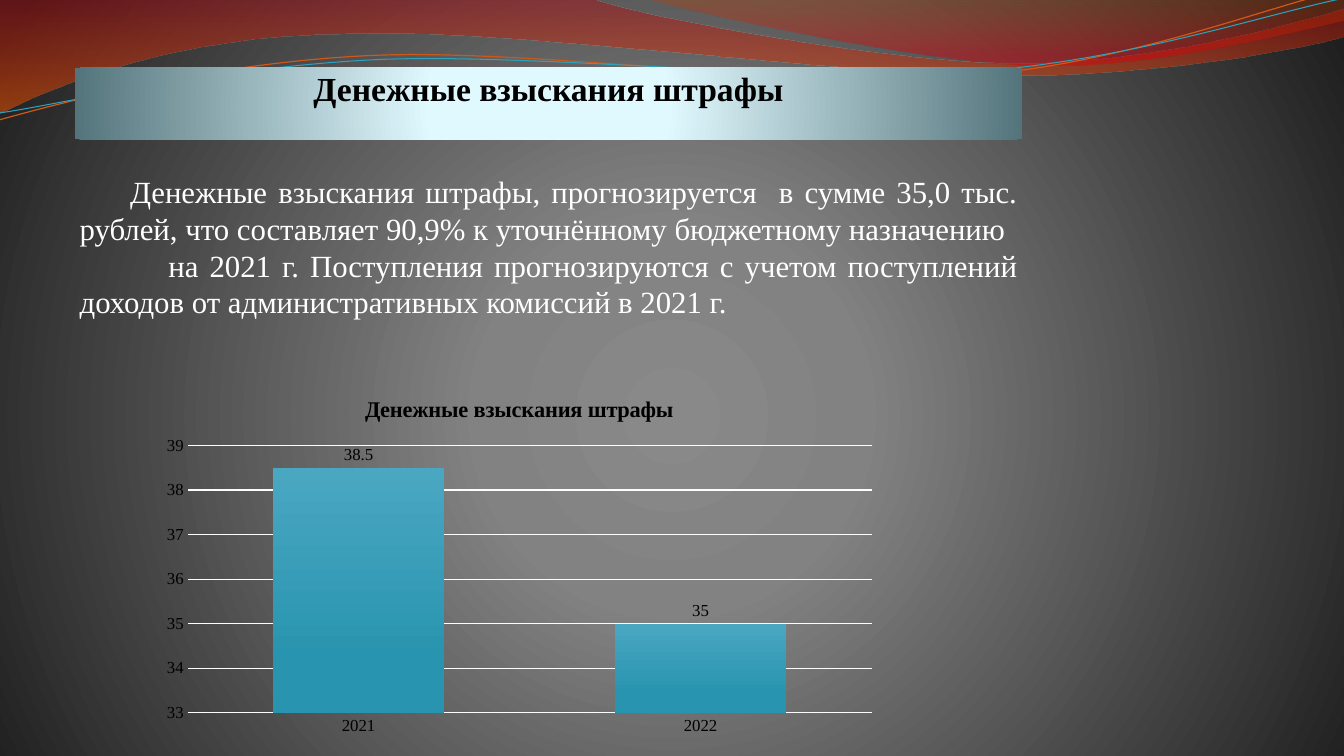
"""Builds a slide on fines revenue with a title bar, a paragraph and a column chart."""
from lxml import etree
from pptx import Presentation
from pptx.chart.data import CategoryChartData
from pptx.dml.color import RGBColor
from pptx.enum.chart import XL_CHART_TYPE, XL_LABEL_POSITION, XL_TICK_MARK
from pptx.enum.text import MSO_ANCHOR, MSO_AUTO_SIZE, PP_ALIGN
from pptx.oxml.ns import qn
from pptx.util import Inches, Pt

COLORS = {
    "black": "000000", "white": "FFFFFF", "grid": "FAFEFE",
    "orange": "CF5818", "teal": "2DA2BF",
    "crimson": "AF0911", "flame": "EE5300", "rust": "C24400", "scarlet": "DC000B",
    "smoke": "898989", "ash": "828282", "coal": "1F1F1F",
    "ice": "E1FAFF", "frost": "E0F9FF", "slate": "54747B",
    "column_top": "4AA7C2", "column_base": "2994AF",
}
FONT = "Times New Roman"
CELL = Inches(0.1)
COLUMNS, ROWS = 133.3, 75
HEADING = "Денежные взыскания штрафы"
BODY = [
    ("Денежные взыскания штрафы, прогнозируется  в сумме 35,0 тыс. рублей, "
     "что составляет 90,9% к уточнённому бюджетному назначению", 5, 4.4),
    ("на 2021 г. Поступления прогнозируются с учетом поступлений доходов "
     "от административных комиссий в 2021 г.", 8.8, 0),
]
RIBBONS = [
    ([(-0.1, -0.1), (58.7, -0.1), (63.4, 1.7, 88.5, 6.3, 101.1, 6.3),
      (113.8, 6.3, 127.8, 2.6, 133.3, 0.9), (133.5, 3.6),
      (131.1, 4.4, 116, 7.6, 99.4, 7.5), (82.9, 7.5, 50.9, 2.8, 34.3, 3.4),
      (17.2, 3.6, 6.1, 8.3, -0.1, 11.3)],
     [(0, "crimson", 45), (100, "flame", 55)]),
    ([(63.9, -0.1), (67.9, 1.1, 90.9, 6.2, 102.5, 6.5),
      (114.1, 6.9, 128.2, 3.2, 133.3, 2.1), (133.3, 0)],
     [(0, "rust", 30), (80, "scarlet", 45)]),
]
STRANDS = [
    ([(-0.1, 11.9), (6.4, 10.1, 21.1, 6.2, 36.9, 5.5),
      (52.7, 4.8, 79, 8.7, 95, 7.6), (111, 6.6, 125.2, 0.8, 133.1, -1)], "orange", 0.85),
    ([(0, 11.2), (6.3, 10.3, 21.8, 6.6, 37.8, 5.9),
      (53.7, 5.3, 79.6, 8.2, 95.5, 7.2), (111.5, 6.2, 125.5, 1.4, 133.4, -0.2)], "teal", 0.75),
]


def cells(count):
    return round(count * CELL)


class SlideBuilder:
    """Holds the style and the current slide."""

    def __init__(self, deck, font, colors):
        self.font, self.colors = font, colors
        self.page = deck.slides.add_slide(deck.slide_layouts[1])

    def color(self, name):
        return RGBColor.from_string(self.colors[name])

    def style(self, font, size, color, bold=False):
        font.name, font.size, font.bold = self.font, Pt(size), bold
        font.color.rgb = self.color(color)

    def gradient(self, fill, stops, radial=False):
        fill.solid()
        solid = fill._xPr.find(qn("a:solidFill"))
        grad = etree.Element(qn("a:gradFill"), rotWithShape="1")
        stop_list = etree.SubElement(grad, qn("a:gsLst"))
        for position, name, alpha in stops:
            stop = etree.SubElement(stop_list, qn("a:gs"), pos=str(position * 1000))
            tone = etree.SubElement(stop, qn("a:srgbClr"), val=self.colors[name])
            if alpha < 100:
                etree.SubElement(tone, qn("a:alpha"), val=str(alpha * 1000))
        if radial:
            shade = etree.SubElement(grad, qn("a:path"), {"path": "circle"})
            etree.SubElement(shade, qn("a:fillToRect"),
                             l="10000", t="110000", r="10000", b="100000")
        else:
            etree.SubElement(grad, qn("a:lin"), ang="5400000", scaled="0")
        solid.getparent().replace(solid, grad)

    def background(self, stops):
        self.gradient(self.page.background.fill, stops, radial=True)

    def outline(self, segments, closed):
        points = [(segment[i] * 100, segment[i + 1] * 100)
                  for segment in segments for i in range(0, len(segment), 2)]
        builder = self.page.shapes.build_freeform(*points[0], scale=CELL / 100)
        builder.add_line_segments(points[1:], close=closed)
        shape = builder.convert_to_shape()
        shape.shadow.inherit = False
        lines = iter(list(shape._element.iter(qn("a:lnTo"))))
        for segment in segments[1:]:
            first = next(lines)
            if len(segment) == 6:
                first.tag_holder = None
                curve = etree.Element(qn("a:cubicBezTo"))
                first.getparent().replace(first, curve)
                curve.append(first[0])
                for line in (next(lines), next(lines)):
                    curve.append(line[0])
                    line.getparent().remove(line)
        return shape

    def ribbon(self, segments, stops):
        shape = self.outline(segments, True)
        self.gradient(shape.fill, stops)
        shape.line.fill.background()

    def strand(self, segments, color, width):
        shape = self.outline(segments, False)
        shape.fill.background()
        shape.line.color.rgb = self.color(color)
        shape.line.width = Pt(width)

    def placeholder(self, index, place, inset):
        box = self.page.placeholders[index]
        self.page.shapes._spTree.append(box._element)
        box.left, box.top, box.width, box.height = map(cells, place)
        frame = box.text_frame
        frame.word_wrap, frame.auto_size = True, MSO_AUTO_SIZE.NONE
        frame.vertical_anchor = MSO_ANCHOR.TOP
        frame.margin_left = frame.margin_right = cells(inset)
        frame.margin_top = frame.margin_bottom = cells(inset)
        return box

    def add_span(self, para, text, size, color, bold=False):
        span = para.add_run()
        span.text = text
        self.style(span.font, size, color, bold)

    def title(self, text, place, stops):
        box = self.placeholder(0, place, 0)
        self.gradient(box.fill, stops, radial=True)
        para = box.text_frame.paragraphs[0]
        para.alignment = PP_ALIGN.CENTER
        self.add_span(para, text, 24, "black", True)

    def body(self, parts, place):
        frame = self.placeholder(1, place, 0.5).text_frame
        for number, (text, indent, space) in enumerate(parts):
            para = frame.add_paragraph() if number else frame.paragraphs[0]
            para.alignment, para.space_before = PP_ALIGN.JUSTIFY, Pt(space)
            settings = para._p.get_or_add_pPr()
            settings.set("marL", "0")
            settings.set("indent", str(cells(indent)))
            etree.SubElement(settings, qn("a:buNone"))
            self.add_span(para, text, 22, "white")

    def axis(self, axis, line):
        axis.major_tick_mark = axis.minor_tick_mark = XL_TICK_MARK.NONE
        self.style(axis.tick_labels.font, 12, "black")
        if line:
            self.rule(axis.format.line)
        else:
            axis.format.line.fill.background()

    def rule(self, line):
        line.color.rgb = self.color("grid")
        line.width = Pt(0.75)

    def column_chart(self, name, categories, values, limits, place, stops):
        data = CategoryChartData()
        data.categories = categories
        data.add_series(name, values)
        chart = self.page.shapes.add_chart(
            XL_CHART_TYPE.COLUMN_CLUSTERED, *map(cells, place), data).chart
        self.style(chart.font, 10, "white")
        chart.has_legend = False
        chart.has_title = True
        self.add_span(chart.chart_title.text_frame.paragraphs[0], name, 16, "black", True)
        self.axis(chart.category_axis, True)
        scale = chart.value_axis
        self.axis(scale, False)
        scale.minimum_scale, scale.maximum_scale = limits
        scale.major_unit = 1
        self.rule(scale.major_gridlines.format.line)
        plot = chart.plots[0]
        plot.gap_width, plot.overlap, plot.vary_by_categories = 100, -24, False
        self.gradient(plot.series[0].format.fill, stops)
        labels = plot.series[0].data_labels
        labels.show_value, labels.position = True, XL_LABEL_POSITION.OUTSIDE_END
        self.style(labels.font, 12, "black")


def main():
    deck = Presentation()
    deck.slide_width, deck.slide_height = cells(COLUMNS), cells(ROWS)
    slide = SlideBuilder(deck, FONT, COLORS)
    slide.background([(0, "smoke", 100), (25, "ash", 100), (100, "coal", 100)])
    for segments, stops in RIBBONS:
        slide.ribbon(segments, stops)
    for segments, color, width in STRANDS:
        slide.strand(segments, color, width)
    slide.title(HEADING, (7.4, 6.7, 94, 7.1),
                [(0, "ice", 100), (25, "frost", 100), (100, "slate", 100)])
    slide.body(BODY, (7.4, 16.6, 94, 52.1))
    slide.column_chart(HEADING, ["2021", "2022"], [38.5, 35], (33, 39), (15.1, 37.5, 72.8, 36.1),
                       [(0, "column_top", 100), (78, "column_base", 100)])
    deck.save("out.pptx")


if __name__ == "__main__":
    main()
